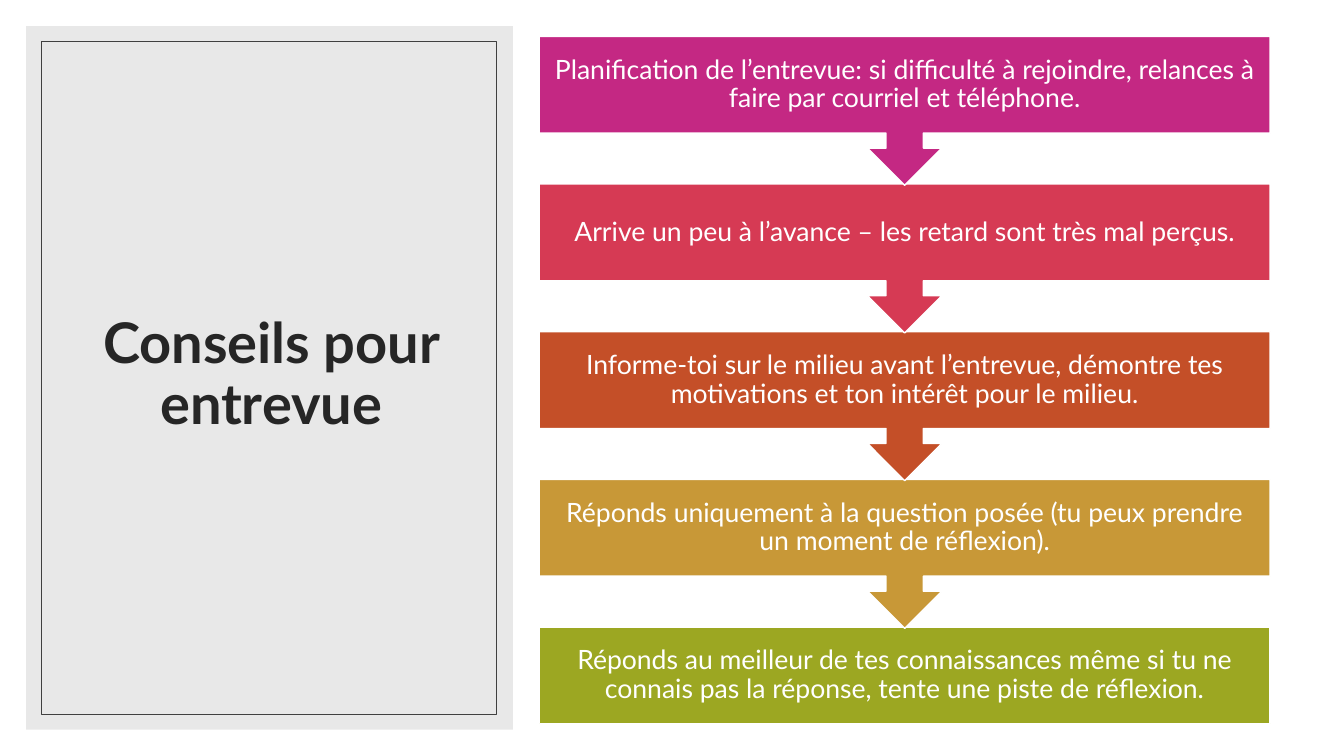
import pptx
import pptx.util
import pptx.dml.color
import pptx.enum.shapes
import pptx.enum.text
import pptx.oxml.ns
import lxml.etree

Pt = pptx.util.Pt
SHAPES = pptx.enum.shapes.MSO_SHAPE

# Content
TITLE = "Conseils pour entrevue"
TIPS = [
    ("Planification de l’entrevue: si difficulté à rejoindre, relances à faire par courriel et téléphone.", "C42883"),
    ("Arrive un peu à l’avance – les retard sont très mal perçus.", "D63A54"),
    ("Informe-toi sur le milieu avant l’entrevue, démontre tes motivations et ton intérêt pour le milieu.", "C44F28"),
    ("Réponds uniquement à la question posée (tu peux prendre un moment de réflexion).", "C89837"),
    ("Réponds au meilleur de tes connaissances même si tu ne connais pas la réponse, tente une piste de réflexion.", "9CA722"),
]

# Layout, in points
PANEL = (18.72, 18.72, 347.76, 502.56)
FRAME = (29.52, 29.52, 324.72, 480.96)
TITLE_BOX = (45.36, 43.92, 296.64, 449.28)
TIP_LEFT, TIP_TOP, TIP_WIDTH = 385.2, 26, 522
TIP_HEIGHT, CALLOUT_HEIGHT, TIP_PITCH = 69.12, 106.4, 105.48
TIP_INSET = 10.8


def paint(colour_format, hex_colour):
    colour_format.rgb = pptx.dml.color.RGBColor.from_string(hex_colour)


def add_block(slide, kind, box, fill=None, line=None, line_width=1):
    block = slide.shapes.add_shape(kind, *map(Pt, box))
    block.shadow.inherit = False
    if fill:
        block.fill.solid()
        paint(block.fill.fore_color, fill)
    else:
        block.fill.background()
    if line:
        paint(block.line.color, line)
        block.line.width = Pt(line_width)
    else:
        block.line.fill.background()
    return block


def write(holder, text, size, colour, inset, bold=False):
    frame = holder.text_frame
    frame.text = text
    frame.word_wrap = True
    frame.vertical_anchor = pptx.enum.text.MSO_ANCHOR.MIDDLE
    frame.margin_left = frame.margin_right = Pt(inset[0])
    frame.margin_top = frame.margin_bottom = Pt(inset[1])
    paragraph = frame.paragraphs[0]
    paragraph.alignment = pptx.enum.text.PP_ALIGN.CENTER
    paragraph.line_spacing = 0.9
    font = paragraph.runs[0].font
    font.name, font.size, font.bold = "Lato", Pt(size), bold
    paint(font.color, colour)


def main():
    deck = pptx.Presentation()
    deck.slide_width, deck.slide_height = Pt(960), Pt(540)
    slide = deck.slides.add_slide(deck.slide_layouts[6])
    slide.background.fill.solid()
    paint(slide.background.fill.fore_color, "FFFFFF")

    # Title panel: translucent grey, title, thin frame
    panel = add_block(slide, SHAPES.RECTANGLE, PANEL, fill="D9D9D9")
    qn = pptx.oxml.ns.qn
    panel_colour = panel.fill._xPr.find(qn("a:solidFill")).find(qn("a:srgbClr"))
    lxml.etree.SubElement(panel_colour, qn("a:alpha")).set("val", "60000")
    title = slide.shapes.add_textbox(*map(Pt, TITLE_BOX))
    write(title, TITLE, 40, "262626", (7.2, 3.6), bold=True)
    add_block(slide, SHAPES.RECTANGLE, FRAME, line="404040", line_width=0.5)

    # Tips, from the bottom up so that each arrow tip lies over the next box
    last = len(TIPS) - 1
    for step, (tip, colour) in reversed(list(enumerate(TIPS))):
        kind, height = SHAPES.DOWN_ARROW_CALLOUT, CALLOUT_HEIGHT
        if step == last:
            kind, height = SHAPES.RECTANGLE, TIP_HEIGHT
        box = (TIP_LEFT, TIP_TOP + step * TIP_PITCH, TIP_WIDTH, height)
        block = add_block(slide, kind, box, fill=colour, line="FFFFFF")
        write(block, tip, 19, "FFFFFF", (TIP_INSET, TIP_INSET))

    deck.save("out.pptx")


if __name__ == "__main__":
    main()
